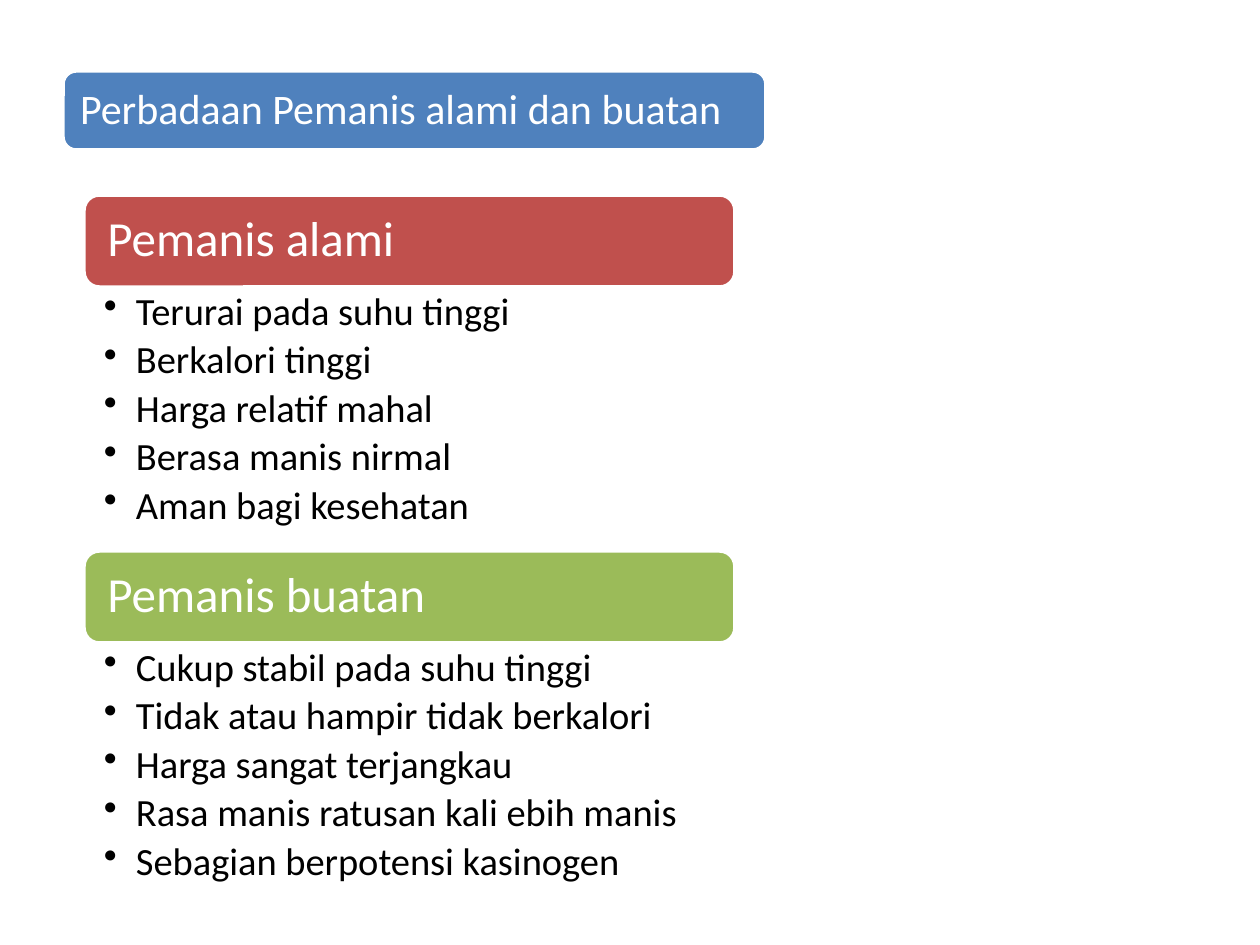
from lxml import etree
from pptx import Presentation
from pptx.dml.color import RGBColor
from pptx.enum.shapes import MSO_SHAPE
from pptx.enum.text import MSO_ANCHOR, MSO_AUTO_SIZE, PP_ALIGN
from pptx.oxml.ns import qn
from pptx.util import Emu, Pt

ROUNDED = MSO_SHAPE.ROUNDED_RECTANGLE
TOP, MIDDLE = MSO_ANCHOR.TOP, MSO_ANCHOR.MIDDLE
FIXED = MSO_AUTO_SIZE.NONE
LEFT = PP_ALIGN.LEFT
PX = 914400 // 126
TITLE_ONLY = 5


def px(length):
    return Emu(length * PX)


def color(hex_string):
    return RGBColor.from_string(hex_string)


class Deck:
    font = "Calibri"
    light = "FFFFFF"
    dark = "000000"

    def __init__(self, width, height):
        self.presentation = Presentation()
        self.presentation.slide_width = px(width)
        self.presentation.slide_height = px(height)
        layout = self.presentation.slide_layouts[TITLE_ONLY]
        self.slide = self.presentation.slides.add_slide(layout)

    def set_text(self, frame, lines, size, ink, insets, anchor, gap=0):
        frame.word_wrap = True
        frame.auto_size = FIXED
        frame.vertical_anchor = anchor
        (frame.margin_left, frame.margin_top,
         frame.margin_right, frame.margin_bottom) = map(px, insets)
        frame.text = "\n".join(lines)
        for paragraph in frame.paragraphs:
            paragraph.alignment = LEFT
            paragraph.line_spacing = 0.9
            paragraph.space_after = Pt(gap)
            for run in paragraph.runs:
                run.font.name = self.font
                run.font.size = Pt(size)
                run.font.color.rgb = color(ink)

    def panel(self, box, fill):
        panel = self.slide.shapes.add_shape(ROUNDED, *map(px, box))
        panel.shadow.inherit = False
        panel.fill.solid()
        panel.fill.fore_color.rgb = color(fill)
        panel.line.color.rgb = color(self.light)
        panel.line.width = Pt(2)
        return panel

    def title(self, text, box, fill):
        banner = self.panel(box, fill)
        title = self.slide.shapes.title
        title.left, title.top, title.width, title.height = map(px, box)
        self.set_text(title.text_frame, [text], 24, self.light, (17, 17, 17, 17), MIDDLE)
        banner._element.addnext(title._element)

    def heading(self, text, box, fill):
        heading = self.panel(box, fill)
        self.set_text(heading.text_frame, [text], 28, self.light, (19, 19, 19, 19), MIDDLE)

    def bullets(self, items, box):
        listing = self.slide.shapes.add_textbox(*map(px, box))
        self.set_text(listing.text_frame, items, 22, self.dark, (20, 5, 28, 5), TOP, 4)
        for paragraph in listing.text_frame.paragraphs:
            properties = paragraph._p.get_or_add_pPr()
            properties.set("marL", str(px(32)))
            properties.set("indent", str(px(-32)))
            etree.SubElement(properties, qn("a:buChar")).set("char", "•")

    def save(self):
        self.presentation.save("out.pptx")


SWEETENERS = [
    ("Pemanis alami", "C0504D", [
        "Terurai pada suhu tinggi",
        "Berkalori tinggi",
        "Harga relatif mahal",
        "Berasa manis nirmal",
        "Aman bagi kesehatan",
    ]),
    ("Pemanis buatan", "9BBB59", [
        "Cukup stabil pada suhu tinggi",
        "Tidak atau hampir tidak berkalori",
        "Harga sangat terjangkau",
        "Rasa manis ratusan kali ebih manis",
        "Sebagian berpotensi kasinogen",
    ]),
]


def main():
    deck = Deck(1260, 945)
    deck.title("Perbadaan Pemanis alami dan buatan", (63, 71, 703, 79), "4F81BD")
    left, top, width = 84, 195, 651
    heading_height, list_height = 92, 264
    for name, fill, traits in SWEETENERS:
        deck.heading(name, (left, top, width, heading_height), fill)
        top += heading_height
        deck.bullets(traits, (left, top, width, list_height))
        top += list_height
    deck.save()


if __name__ == "__main__":
    main()
